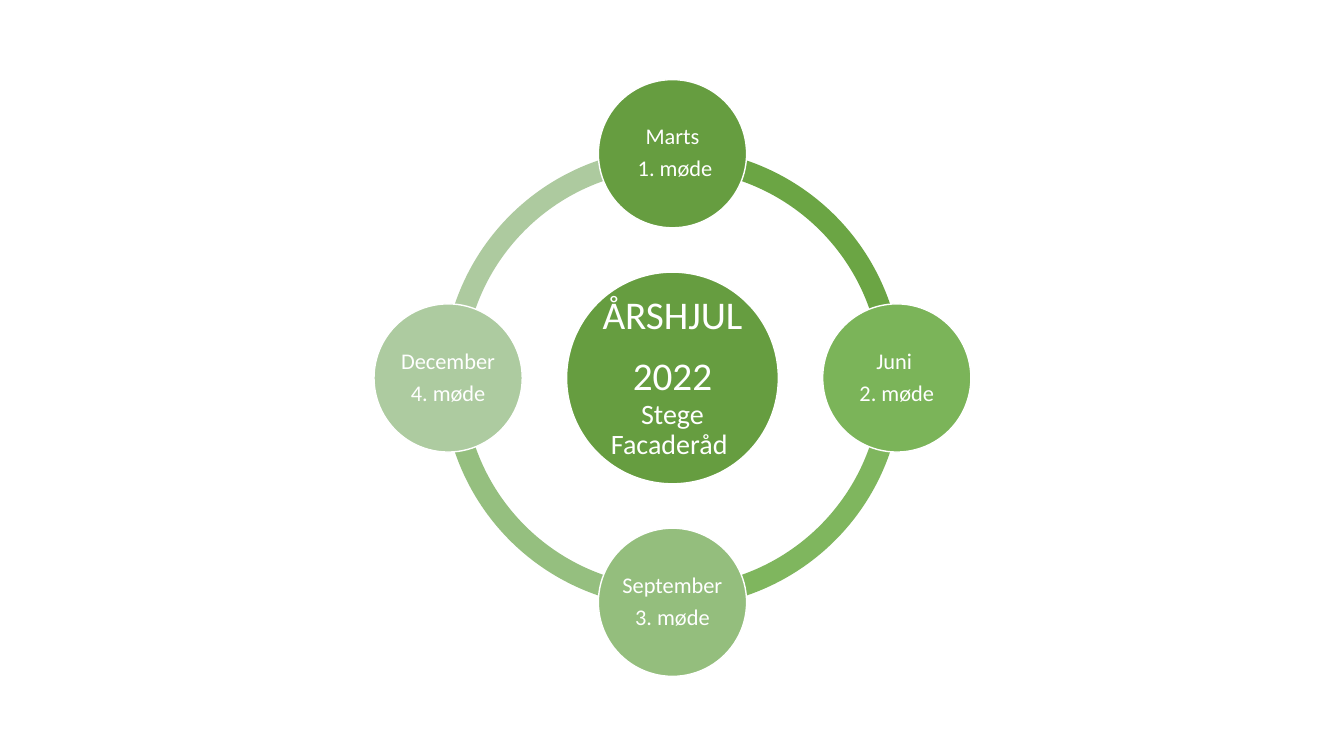
from dataclasses import dataclass
from math import cos, radians, sin

from pptx import Presentation
from pptx.dml.color import RGBColor
from pptx.enum import shapes, text
from pptx.util import Inches, Pt


@dataclass(frozen=True)
class Theme:
    font: str = "Calibri"
    white: str = "FFFFFF"
    hub: str = "669D40"
    title: int = 28
    gap: int = 32
    name: int = 20
    label: int = 16


THEME = Theme()
# Label lines, circle colour, colour of the arc to the next meeting
MEETINGS = [
    (["Marts", " 1. møde"], "669D40", "6BA544"),
    (["Juni ", "2. møde"], "7BB459", "7FB65E"),
    (["September", "3. møde"], "94BE7D", "95BF7F"),
    (["December", "4. møde"], "ADCBA0", "ADCA9F"),
]
HUB = [
    [("ÅRSHJUL", THEME.title)],
    [("2022", THEME.title), (" ", THEME.gap), ("Stege Facaderåd ", THEME.name)],
]


def add_round(slide, kind, x, y, size, color):
    """Add a plain filled shape of equal width and height, centred on x, y."""
    shape = slide.shapes.add_shape(
        kind, Inches(x - size / 2), Inches(y - size / 2), Inches(size), Inches(size))
    shape.shadow.inherit = False
    shape.fill.solid()
    shape.fill.fore_color.rgb = RGBColor.from_string(color)
    shape.line.fill.background()
    return shape


def add_disc(slide, x, y, size, color, lines, inset):
    """Add a circle whose lines are lists of (text, type size) runs."""
    disc = add_round(slide, shapes.MSO_SHAPE.OVAL, x, y, size, color)
    disc.line.color.rgb = RGBColor.from_string(THEME.white)
    disc.line.width = Pt(1)
    frame = disc.text_frame
    frame.word_wrap = True
    frame.vertical_anchor = text.MSO_ANCHOR.MIDDLE
    frame.margin_left = frame.margin_right = Inches(inset)
    frame.margin_top = frame.margin_bottom = Inches(inset)
    for i, runs in enumerate(lines):
        para = frame.add_paragraph() if i else frame.paragraphs[0]
        para.alignment = text.PP_ALIGN.CENTER
        para.line_spacing = 0.9
        para.space_after = Pt(0.35 * runs[0][1])
        para.font.name = THEME.font
        para.font.color.rgb = RGBColor.from_string(THEME.white)
        if len(runs) == 1:
            para.font.size = Pt(runs[0][1])
        for words, size in runs:
            run = para.add_run()
            run.text = words
            if len(runs) > 1:
                run.font.size = Pt(size)


def add_ring(slide, x, y, size):
    step = 360 / len(MEETINGS)
    for i, (_, _, color) in reversed(list(enumerate(MEETINGS))):
        arc = add_round(slide, shapes.MSO_SHAPE.BLOCK_ARC, x, y, size, color)
        start = 270 + i * step
        # Angles are stored in 60000ths of a degree, adjustments in 100000ths
        arc.adjustments[0] = start % 360 * 0.6
        arc.adjustments[1] = (start + step) % 360 * 0.6
        arc.adjustments[2] = 0.046


def add_wheel(slide, left, top, size):
    """Draw the year wheel inside a square box."""
    x, y = left + size / 2, top + size / 2
    node = 1.47
    reach = (size - node) / 2
    add_ring(slide, x, y, 4.56)
    add_disc(slide, x, y, 2.1, THEME.hub, HUB, 0.04)
    for i, (label, color, _) in enumerate(MEETINGS):
        turn = radians(360 / len(MEETINGS) * i - 90)
        lines = [[(words, THEME.label)] for words in label]
        add_disc(slide, x + reach * cos(turn), y + reach * sin(turn),
                 node, color, lines, 0.02)


def main():
    deck = Presentation()
    deck.slide_width, deck.slide_height = Inches(13.33), Inches(7.5)
    slide = deck.slides.add_slide(deck.slide_layouts[6])
    add_wheel(slide, 3.71, 0.79, 5.92)
    deck.save("out.pptx")


if __name__ == "__main__":
    main()
